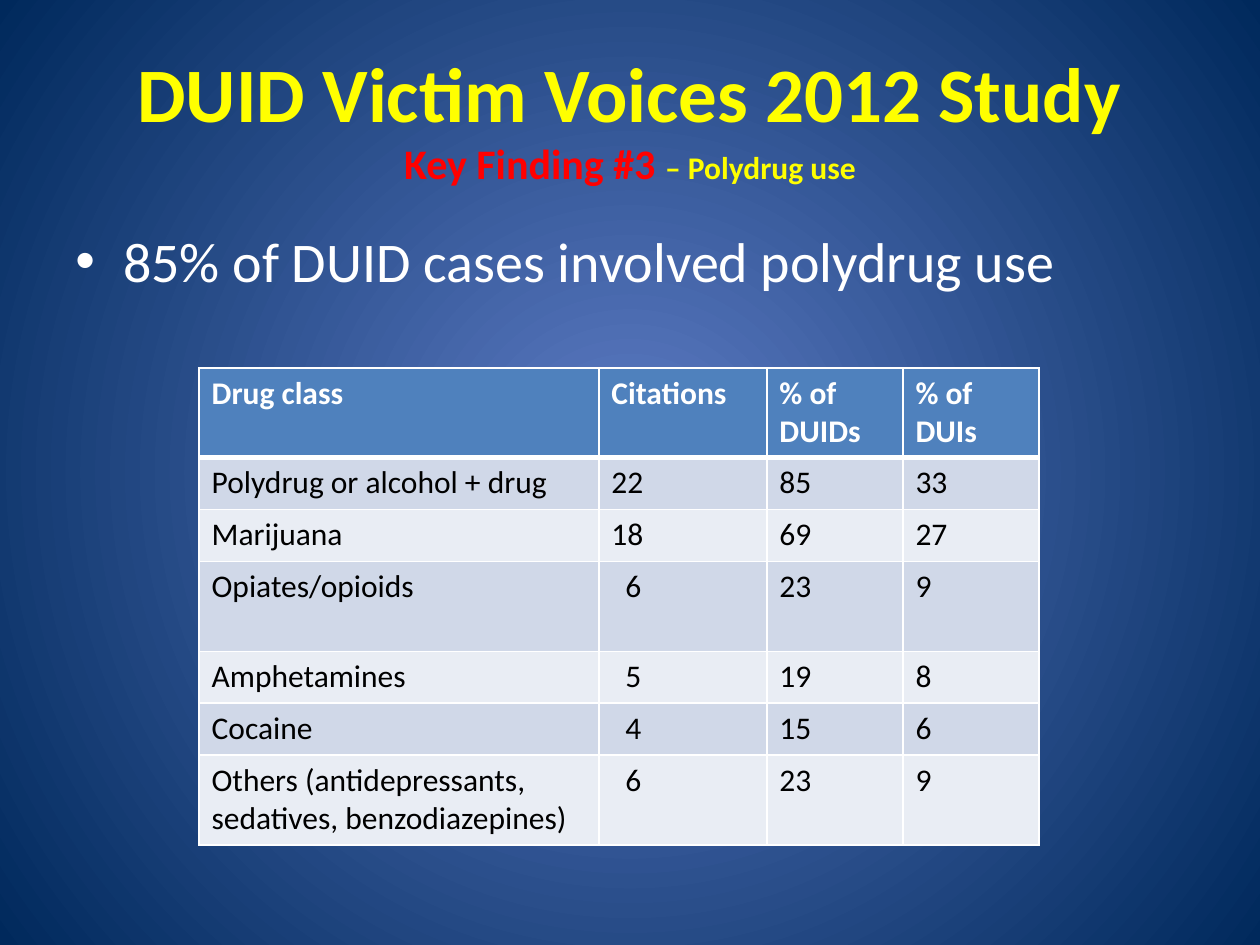
from lxml import etree
from pptx import Presentation
from pptx.dml.color import RGBColor
from pptx.enum.text import MSO_ANCHOR, PP_ALIGN
from pptx.oxml.ns import qn
from pptx.util import Inches, Pt

MIDDLE = MSO_ANCHOR.MIDDLE
CENTER = PP_ALIGN.CENTER
FONT = "Calibri"
WIDE, HIGH = 10, 7.5
HUES = {
    "glow": "5E7CC5", "deep": "00295C", "yellow": "FFFF00", "red": "FF0000",
    "white": "FFFFFF", "black": "000000", "head": "4F81BD",
    "odd": "D0D8E8", "even": "E9EDF4",
}
# Column widths and row heights as shares of the table
COLS = (0.476, 0.2, 0.162, 0.162)
LOW, TALL = 0.11, 0.19
ROWS = [
    (TALL, "Drug class", "Citations", "% of DUIDs", "% of DUIs"),
    (LOW, "Polydrug or alcohol + drug", "22", "85", "33"),
    (LOW, "Marijuana", "18", "69", "27"),
    (TALL, "Opiates/opioids", "6", "23", "9"),
    (LOW, "Amphetamines", "5", "19", "8"),
    (LOW, "Cocaine", "4", "15", "6"),
    (TALL, "Others (antidepressants, sedatives, benzodiazepines)", "6", "23", "9"),
]


def write(para, text, size=18, hue="white", bold=False):
    run = para.add_run()
    run.text = text
    font = run.font
    font.name, font.size, font.bold = FONT, Pt(size), bold
    font.color.rgb = RGBColor.from_string(HUES[hue])


def frame(slide, box):
    text = slide.shapes.add_textbox(*map(Inches, box)).text_frame
    text.word_wrap = True
    return text


def paint(slide):
    fill = slide.background.fill
    fill.gradient()
    for stop, hue in zip(fill.gradient_stops, ("glow", "deep")):
        stop.color.rgb = RGBColor.from_string(HUES[hue])
    # Radial spread from the centre
    grad = slide.element.find(".//" + qn("a:gradFill"))
    line = grad.find(qn("a:lin"))
    if line is not None:
        grad.remove(line)
    ring = etree.Element(qn("a:path"), path="circle")
    etree.SubElement(ring, qn("a:fillToRect"),
                     {side: "50000" for side in "ltrb"})
    grad.find(qn("a:gsLst")).addnext(ring)


def title(slide, box):
    text = frame(slide, box)
    text.vertical_anchor = MIDDLE
    para = text.paragraphs[0]
    para.alignment = CENTER
    write(para, "DUID Victim Voices 2012 Study", size=44, hue="yellow", bold=True)
    para.add_line_break()
    write(para, "Key Finding #3 ", size=24, hue="red", bold=True)
    write(para, "– Polydrug use", hue="yellow", bold=True)


def body(slide, box):
    para = frame(slide, box).paragraphs[0]
    write(para, "85% of DUID cases involved polydrug use", size=32)
    # Hanging bullet
    props = para._p.get_or_add_pPr()
    hang = Inches(0.38)
    props.set("marL", str(hang))
    props.set("indent", str(-hang))
    space = etree.SubElement(props, qn("a:spcBef"))
    etree.SubElement(space, qn("a:spcPct"), val="20000")
    etree.SubElement(props, qn("a:buFont"), typeface="Arial")
    etree.SubElement(props, qn("a:buChar"), char="•")


def edge(cell, base):
    props = cell._tc.get_or_add_tcPr()
    widths = {"L": 1, "R": 1, "T": 1, "B": base}
    for spot, (side, width) in enumerate(widths.items()):
        line = etree.Element(qn("a:ln" + side), w=str(Pt(width)))
        fill = etree.SubElement(line, qn("a:solidFill"))
        etree.SubElement(fill, qn("a:srgbClr"), val=HUES["white"])
        props.insert(spot, line)


def table(slide, box):
    left, top, width, height = box
    grid = slide.shapes.add_table(
        len(ROWS), len(COLS), *map(Inches, box)).table
    for col, share in zip(grid.columns, COLS):
        col.width = Inches(width * share)
    for i, (share, *texts) in enumerate(ROWS):
        grid.rows[i].height = Inches(height * share)
        head = i == 0
        tint = "head" if head else "odd" if i % 2 else "even"
        for j, text in enumerate(texts):
            cell = grid.cell(i, j)
            cell.fill.solid()
            cell.fill.fore_color.rgb = RGBColor.from_string(HUES[tint])
            # Single digits sit under the units of the citations
            if j == 1 and len(text) == 1:
                cell.margin_left = Inches(0.21)
            write(cell.text_frame.paragraphs[0], text,
                  hue="white" if head else "black", bold=head)
            edge(cell, 3 if head else 1)


def main():
    deck = Presentation()
    deck.slide_width, deck.slide_height = Inches(WIDE), Inches(HIGH)
    slide = deck.slides.add_slide(deck.slide_layouts[6])
    side, span = WIDE * 0.05, WIDE * 0.9
    paint(slide)
    title(slide, (side, HIGH * 0.04, span, HIGH / 6))
    body(slide, (side, 1.75, span, HIGH * 0.66))
    table(slide, (1.58, 2.92, WIDE * 2 / 3, HIGH / 2))
    deck.save("out.pptx")


if __name__ == "__main__":
    main()
